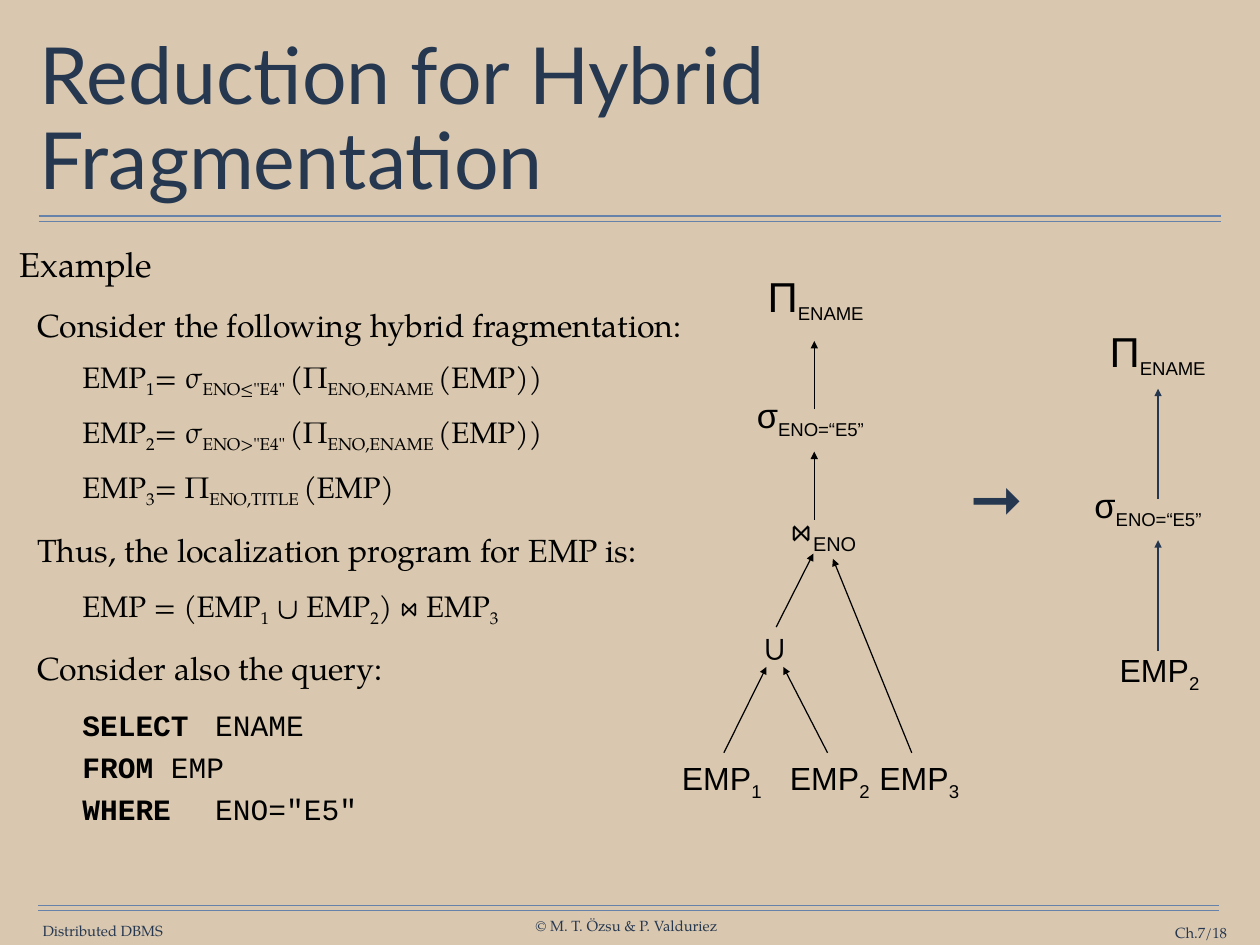
from lxml import etree
from pptx import Presentation
from pptx.dml.color import RGBColor
from pptx.enum.shapes import MSO_CONNECTOR as CONN
from pptx.enum.text import MSO_ANCHOR as ANCHOR, PP_ALIGN as ALIGN
from pptx.oxml.ns import qn
from pptx.util import Inches, Pt

NAVY, BLACK, RULE, SAND = "263750", "000000", "6682AA", "D9C8AF"
SERIF, SANS, MONO = "TeX Gyre Pagella", "Arial", "Courier New"

TITLE = "Reduction for Hybrid Fragmentation"
# Subscripts stand between bars.
# text, size, indent, space before
BODY = [
    ("Example", 28, 0, 0),
    ("Consider the following hybrid fragmentation:", 26, 0.2, 17),
    ('EMP|1|= σ|ENO≤"E4" |(Π|ENO,ENAME |(EMP))', 24, 0.71, 12),
    ('EMP|2|= σ|ENO>"E4" |(Π|ENO,ENAME |(EMP))', 24, 0.71, 12),
    ("EMP|3|= Π|ENO,TITLE |(EMP)", 24, 0.71, 12),
    ("Thus, the localization program for EMP is:", 26, 0.2, 17),
    ("EMP = (EMP|1| ∪ EMP|2|) ⋈ EMP|3|", 24, 0.71, 15.6),
    ("Consider also the query:", 26, 0.2, 17),
]
# keyword, rest, space before
QUERY = [("SELECT", "\tENAME", 15.6), ("FROM", "\tEMP", 5.5), ("WHERE", '\tENO="E5"', 5.5)]

# text, left, top, width, alignment
FOOTER = [
    ("Distributed DBMS", 0.47, 10.41, 1.38, ALIGN.CENTER),
    ("© M. T. Özsu & P. Valduriez", 6.03, 10.35, 2.08, ALIGN.CENTER),
    ("Ch.7/18", 12.31, 10.43, 1.54, ALIGN.RIGHT),
]
# left, right, y
RULES = [(0.44, 13.78, 2.44), (0.43, 13.76, 10.22)]
RULE_GAP = 0.06

# size, subscript size, width, height, font, colour
RELATION = (26, 26, 1.21, 0.58, SANS, BLACK)
UNION = (28, 28, 0.59, 0.61, SANS, BLACK)
JOIN = (28, 28, 1.23, 0.61, SERIF, BLACK)
SELECTION = (28, 26, 1.65, 0.61, SANS, BLACK)
PROJECTION = (34, 26, 1.51, 0.71, SANS, BLACK)
BECOMES = (51, 51, 0.95, 1, SANS, NAVY)
# text, kind, left, top
NODES = [
    ("EMP|1|", RELATION, 7.54, 8.49),
    ("EMP|2|", RELATION, 8.76, 8.49),
    ("EMP|3|", RELATION, 9.77, 8.49),
    ("∪", UNION, 8.45, 7),
    ("⋈|ENO|", JOIN, 8.68, 5.67),
    ("σ|ENO=“E5”|", SELECTION, 8.32, 4.38),
    ("Π|ENAME|", PROJECTION, 8.45, 2.99),
    ("➞", BECOMES, 10.77, 5.11),
    ("EMP|2|", RELATION, 12.48, 7.27),
    ("σ|ENO=“E5”|", SELECTION, 12.13, 5.39),
    ("Π|ENAME|", PROJECTION, 12.31, 3.61),
]
# from x, y, to x, y
ARROWS = {
    BLACK: [
        (8.17, 8.5, 8.65, 7.53), (9.34, 8.5, 8.84, 7.53), (8.76, 7.08, 9.18, 6.25),
        (10.29, 8.5, 9.4, 6.31), (9.19, 5.87, 9.19, 5.1), (9.19, 4.62, 9.19, 3.85),
    ],
    NAVY: [(13.07, 7.35, 13.07, 6.1), (13.07, 5.63, 13.07, 4.39)],
}


def rgb(color):
    return RGBColor.from_string(color)


def add_box(s, box, pad=(0, 0), wrap=True, anchor=ANCHOR.TOP):
    tf = s.shapes.add_textbox(*map(Inches, box)).text_frame
    x, y = map(Inches, pad)
    frame = dict(margin_left=x, margin_right=x, margin_top=y, margin_bottom=y,
                 word_wrap=wrap, vertical_anchor=anchor)
    for name, value in frame.items():
        setattr(tf, name, value)
    return tf


def add_run(p, text, size, font, color, bold=False):
    r = p.add_run()
    r.text = text
    for name, value in dict(size=Pt(size), name=font, bold=bold).items():
        setattr(r.font, name, value)
    r.font.color.rgb = rgb(color)
    return r


def add_formula(p, text, size, font, color, sub_size=None, sub_font=None):
    """Write text whose parts between bars are subscripts."""
    for i, part in enumerate(text.split("|")):
        if part and i % 2:
            r = add_run(p, part, sub_size or size, sub_font or font, color)
            r.font._element.set("baseline", "-25000")
        elif part:
            add_run(p, part, size, font, color)


def add_line(s, ends, color, arrow=False):
    c = s.shapes.add_connector(CONN.STRAIGHT, *map(Inches, ends))
    c.line.width = Pt(1)
    c.line.color.rgb = rgb(color)
    if arrow:
        etree.SubElement(c.line._get_or_add_ln(), qn("a:tailEnd"), type="triangle")
    etree.SubElement(c._element.spPr, qn("a:effectLst"))


def indent(p, left, before):
    p._p.get_or_add_pPr().set("marL", str(Inches(left)))
    if before:
        p.space_before = Pt(before)


def main():
    prs = Presentation()
    prs.slide_width, prs.slide_height = Inches(14.22), Inches(10.67)
    s = prs.slides.add_slide(prs.slide_layouts[6])
    s.background.fill.solid()
    s.background.fill.fore_color.rgb = rgb(SAND)

    for left, right, y in RULES:
        for line_y in (y, y + RULE_GAP):
            add_line(s, (left, line_y, right, line_y), RULE)

    for text, left, top, width, align in FOOTER:
        p = add_box(s, (left, top, width, 0.2), wrap=False, anchor=ANCHOR.MIDDLE).paragraphs[0]
        p.alignment = align
        add_run(p, text, 12, SERIF, NAVY)

    p = add_box(s, (0.39, 0.49, 13.44, 1.76), (0.06, 0.06), anchor=ANCHOR.MIDDLE).paragraphs[0]
    p.line_spacing = 0.9
    add_run(p, TITLE, 64, "Lato", NAVY)

    tf = add_box(s, (0.16, 2.69, 7.66, 7.33), (0.06, 0.06))
    for i, (text, size, left, before) in enumerate(BODY):
        p = tf.add_paragraph() if i else tf.paragraphs[0]
        indent(p, left, before)
        add_formula(p, text, size, SERIF, BLACK)
    for keyword, rest, before in QUERY:
        p = tf.add_paragraph()
        indent(p, 0.71, before)
        add_run(p, keyword, 24, MONO, BLACK, bold=True)
        add_run(p, rest, 24, MONO, BLACK)

    for color, arrows in ARROWS.items():
        for ends in arrows:
            add_line(s, ends, color, arrow=True)

    for text, (size, sub_size, width, height, font, color), left, top in NODES:
        p = add_box(s, (left, top, width, height), (0.14, 0.07), wrap=False).paragraphs[0]
        p.alignment = ALIGN.CENTER
        add_formula(p, text, size, font, color, sub_size, SANS)

    prs.save("out.pptx")


if __name__ == "__main__":
    main()
